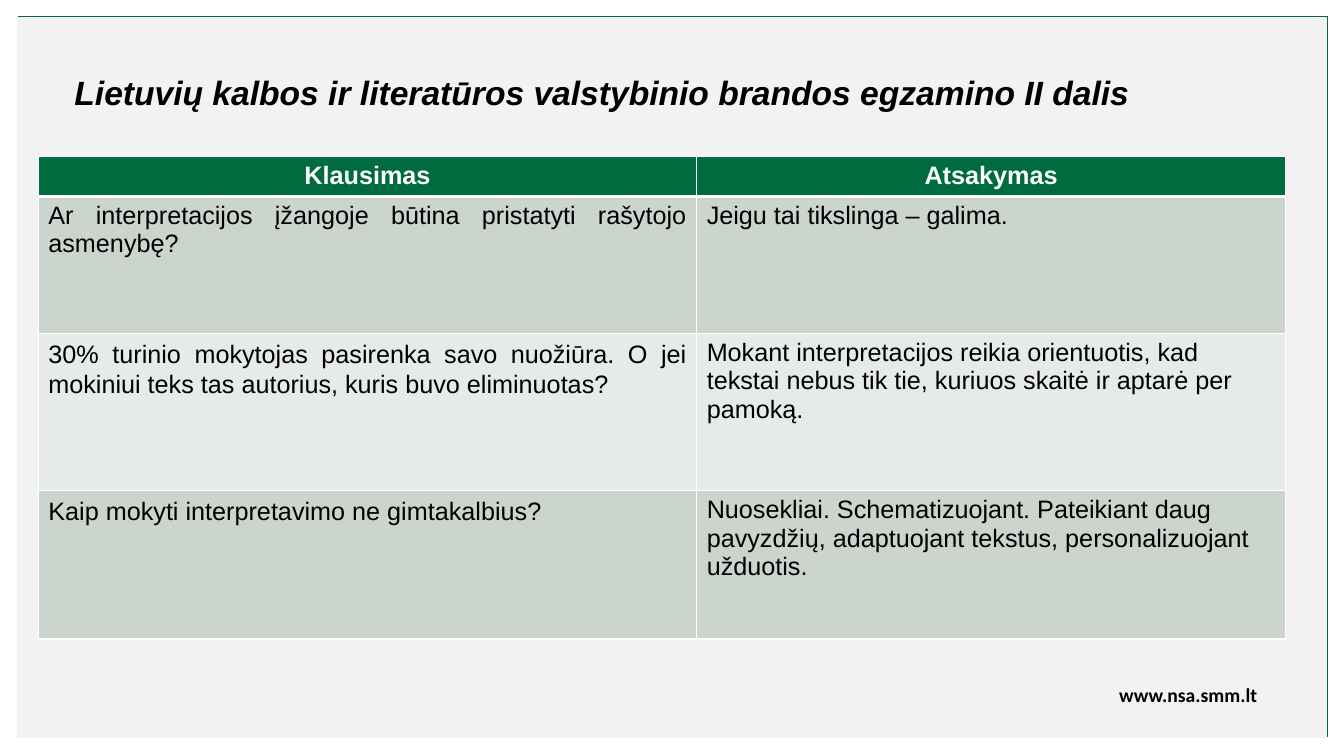
from lxml import etree
from pptx import Presentation
from pptx import util as u
from pptx.dml.color import RGBColor
from pptx.enum import shapes, text
from pptx.oxml.ns import qn

COLORS = {"green": "006B3E", "panel": "F2F2F2", "dark band": "CCD4CE",
          "light band": "E7EBE8", "white": "FFFFFF", "black": "000000"}
LEFT, CENTER, RIGHT, JUSTIFY = (text.PP_ALIGN.LEFT, text.PP_ALIGN.CENTER,
                                text.PP_ALIGN.RIGHT, text.PP_ALIGN.JUSTIFY)
HEADINGS = ("Klausimas", "Atsakymas")
QUESTIONS = (
    ("Ar interpretacijos įžangoje būtina pristatyti rašytojo asmenybę?",
     "Jeigu tai tikslinga – galima."),
    ("30% turinio mokytojas pasirenka savo nuožiūra. O jei mokiniui teks "
     "tas autorius, kuris buvo eliminuotas?",
     "Mokant interpretacijos reikia orientuotis, kad tekstai nebus tik tie, "
     "kuriuos skaitė ir aptarė per pamoką."),
    ("Kaip mokyti interpretavimo ne gimtakalbius?",
     "Nuosekliai. Schematizuojant. Pateikiant daug pavyzdžių, adaptuojant "
     "tekstus, personalizuojant užduotis."),
)
COLUMN_WIDTHS = (6.53, 5.84)
ROW_HEIGHTS = (0.39, 1.36, 1.56, 1.47)


def color(name):
    """Return a palette colour by name."""
    return RGBColor.from_string(COLORS[name])


def write(frame, words, size, tone="black", align=LEFT, face="Arial", bold=False, italic=False):
    """Set one styled paragraph in a text frame and return it."""
    frame.text = words
    paragraph = frame.paragraphs[0]
    paragraph.alignment = align
    font = paragraph.runs[0].font
    font.name, font.size, font.bold, font.italic = face, u.Pt(size), bold, italic
    font.color.rgb = color(tone)
    return paragraph


def add_panel(slide, box):
    """Draw the grey panel over a green one that shows at the top and right."""
    left, top, width, height = box
    for shift, tone in ((0.01, "green"), (0, "panel")):
        panel = slide.shapes.add_shape(
            shapes.MSO_SHAPE.RECTANGLE, u.Inches(left + shift), u.Inches(top - shift),
            u.Inches(width), u.Inches(height))
        panel.shadow.inherit = False
        panel.fill.solid()
        panel.fill.fore_color.rgb = color(tone)
        panel.line.fill.background()


def add_line(slide, box, words, **style):
    """Place a single line of text in the given box."""
    frame = slide.shapes.add_textbox(*map(u.Inches, box)).text_frame
    frame.word_wrap = True
    frame.auto_size = text.MSO_AUTO_SIZE.SHAPE_TO_FIT_TEXT
    write(frame, words, bold=True, **style)


def add_borders(cell, top, bottom):
    """Give a cell white borders of the given top and bottom widths."""
    properties = cell._tc.get_or_add_tcPr()
    sides = (("lnL", 1), ("lnR", 1), ("lnT", top), ("lnB", bottom))
    for place, (side, points) in enumerate(sides):
        line = etree.Element(qn(f"a:{side}"), w=str(u.Pt(points)))
        fill = etree.SubElement(line, qn("a:solidFill"))
        etree.SubElement(fill, qn("a:srgbClr"), val=COLORS["white"])
        properties.insert(place, line)


def add_questions(slide, box):
    """Place the table of questions and answers in the given box."""
    rows = (HEADINGS,) + QUESTIONS
    table = slide.shapes.add_table(len(rows), len(HEADINGS), *map(u.Inches, box)).table
    for column, width in zip(table.columns, COLUMN_WIDTHS):
        column.width = u.Inches(width)
    for r, (entries, height) in enumerate(zip(rows, ROW_HEIGHTS)):
        table.rows[r].height = u.Inches(height)
        heading = r == 0
        band = "green" if heading else "dark band" if r % 2 else "light band"
        for c, words in enumerate(entries):
            cell = table.cell(r, c)
            cell.fill.solid()
            cell.fill.fore_color.rgb = color(band)
            add_borders(cell, 3 if r == 1 else 1, 3 if heading else 1)
            align = CENTER if heading else JUSTIFY if c == 0 or r == 1 else LEFT
            paragraph = write(cell.text_frame, words, 18, "white" if heading else "black",
                              align, bold=heading)
            if r > 1 and c == 0:
                paragraph.line_spacing = 1.07
                paragraph.space_after = u.Pt(8)


def main():
    """Build and save the slide."""
    deck = Presentation()
    deck.slide_width, deck.slide_height = u.Inches(13.33), u.Inches(7.5)
    slide = deck.slides.add_slide(deck.slide_layouts[6])
    add_panel(slide, (0.17, 0.17, 12.99, 7.15))
    add_line(slide, (9.37, 6.73, 3.2, 0.34), "www.nsa.smm.lt",
             size=14, align=RIGHT, face="Calibri")
    add_line(slide, (0.64, 0.66, 11.1, 0.5),
             "Lietuvių kalbos ir literatūros valstybinio brandos egzamino II dalis",
             size=24, italic=True)
    add_questions(slide, (0.38, 1.55, sum(COLUMN_WIDTHS), sum(ROW_HEIGHTS)))
    deck.save("out.pptx")


if __name__ == "__main__":
    main()
